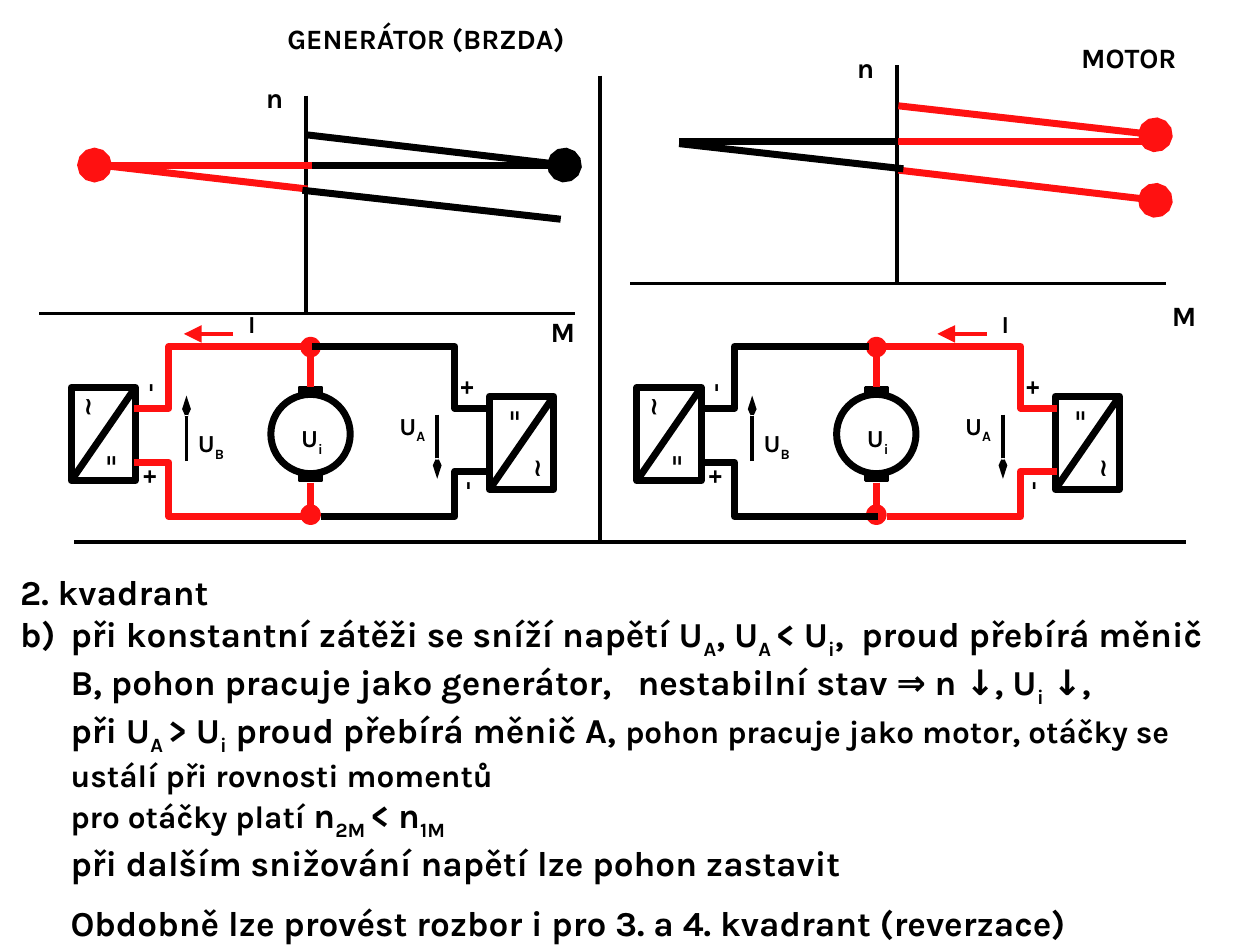
import pptx
import pptx.util
import pptx.dml.color
import pptx.enum.shapes
import pptx.enum.text
import pptx.oxml.ns
import lxml.etree

WIDE = pptx.util.Inches(10)
TALL = pptx.util.Inches(7.5)
COLS, ROWS = 100, 75
BLACK, RED = "000000", "FF1111"
KIND = pptx.enum.shapes.MSO_SHAPE


def col(num):
    return round(WIDE * num / COLS)


def row(num):
    return round(TALL * num / ROWS)


def hue(code):
    return pptx.dml.color.RGBColor.from_string(code)


def node(root, tag, **attrs):
    return lxml.etree.SubElement(root, pptx.oxml.ns.qn(tag), **attrs)


def stroke(item, code, width):
    item.line.color.rgb = hue(code)
    item.line.width = pptx.util.Pt(width)


def line(slide, start, stop, code=BLACK, width=4, tip=None, breadth="lg"):
    item = slide.shapes.add_connector(
        pptx.enum.shapes.MSO_CONNECTOR.STRAIGHT,
        col(start[0]), row(start[1]), col(stop[0]), row(stop[1]))
    stroke(item, code, width)
    if tip:
        node(item.line._get_or_add_ln(), "a:tailEnd", type=tip, w=breadth, len="lg")
    node(item._element.spPr, "a:effectLst")


def wire(slide, points, code):
    spots = [(col(x), row(y)) for x, y in points]
    form = slide.shapes.build_freeform(*spots[0], scale=1.0)
    form.add_line_segments(spots[1:], close=False)
    item = form.convert_to_shape()
    item.shadow.inherit = False
    item.fill.background()
    stroke(item, code, 4)


def block(slide, kind, mid, size, code=BLACK, width=4, solid=False):
    item = slide.shapes.add_shape(
        kind, col(mid[0] - size[0] / 2), row(mid[1] - size[1] / 2),
        col(size[0]), row(size[1]))
    item.shadow.inherit = False
    if solid:
        item.fill.solid()
        item.fill.fore_color.rgb = hue(code)
    else:
        item.fill.background()
    stroke(item, code, width)


def text(slide, words, spot, size, points=14, turn=0, wrap=False,
         inset=0.4, center=False, hang=0):
    item = slide.shapes.add_textbox(
        col(spot[0]), row(spot[1]), col(size[0]), row(size[1]))
    item.rotation = turn
    frame = item.text_frame
    frame.word_wrap = wrap
    frame.auto_size = pptx.enum.text.MSO_AUTO_SIZE.SHAPE_TO_FIT_TEXT
    if inset is not None:
        frame.margin_left = frame.margin_right = col(inset)
        frame.margin_top = frame.margin_bottom = row(inset)
    paras = [[(words, points)]] if isinstance(words, str) else words
    for num, parts in enumerate(paras):
        para = frame.add_paragraph() if num else frame.paragraphs[0]
        if center:
            para.alignment = pptx.enum.text.PP_ALIGN.CENTER
        if hang:
            props = para._p.get_or_add_pPr()
            props.set("marL", str(col(hang)))
            props.set("indent", str(-col(hang)))
        for words, points in parts:
            for place, piece in enumerate(words.split("|")):
                run = para.add_run()
                run.text = piece
                run.font.size = pptx.util.Pt(points)
                run.font.name = "Karla"
                run.font.bold = True
                run.font.color.rgb = hue(BLACK)
                if place % 2:
                    run.font._element.set("baseline", "-25000")
    return frame


def motor(slide, left):
    mid = left + 24.65
    block(slide, KIND.OVAL, (mid, 34.45), (6.3, 6.3))
    for cap, dot, start, stop in ((31.05, 27.55, 28.1, 30.7),
                                  (37.85, 40.85, 38.3, 40.1)):
        block(slide, KIND.RECTANGLE, (mid, cap), (1.7, 0.6), width=2, solid=True)
        block(slide, KIND.OVAL, (mid, dot), (1.1, 1.1), RED, solid=True)
        line(slide, (mid, start), (mid, stop), RED)
    text(slide, "U|i", (left + 23.5, 33.2), (2.7, 3.2))


def bridge(slide, x, y, turn, wave, bars):
    block(slide, KIND.RECTANGLE, (x, y), (5.1, 7.4))
    line(slide, (x + 2.55, y - 3.7), (x - 2.55, y + 3.7))
    for sign, (across, down) in (("∼", wave), ("=", bars)):
        text(slide, sign, (x + across, y + down), (2.3, 3.3), turn=turn,
             wrap=True, inset=None, center=True)


def circuit(slide, left, first, second, flow):
    motor(slide, left)
    bridge(slide, left + 41.4, 35.15, 90, (0.3, -0.25), (-1.4, -4.15))
    bridge(slide, left + 8.2, 34.45, 270, (-2.5, -3.15), (-0.8, 0.85))
    for sign, x, y, wide in (("+", 36.2, 29.5, 2.4), ("-", 36.6, 37.1, 1.6),
                             ("+", 11, 36.6, 2.4), ("-", 11.4, 29.3, 1.6)):
        text(slide, sign, (left + x, y), (wide, 3.1), turn=90)
    for name, x, y, arrow, start, stop in (("U|B", 15.3, 33.6, 14.8, 36.6, 31.4),
                                           ("U|A", 31.3, 32.2, 34.7, 32.9, 38)):
        line(slide, (left + arrow, start), (left + arrow, stop),
             width=2, tip="arrow", breadth="sm")
        text(slide, name, (left + x, y), (3.1, 3.2))
    for out, bend, end, port, rail, code in (
            (10.6, 13.4, 24.1, 32.4, 27.5, first),
            (39, 36.1, 25.5, 37.4, 41, second),
            (10.6, 13.4, 24.8, 36.7, 41, first),
            (39, 36.1, 24.8, 32.4, 27.5, second)):
        wire(slide, [(left + out, port), (left + bend, port),
                     (left + bend, rail), (left + end, rail)], code)
    line(slide, (flow + 18.5, 26.5), (flow + 14.6, 26.5), RED, 2, "triangle")
    text(slide, "I", (flow + 19.3, 24.1), (1.7, 3.1))


def axes(slide, left, top, mark, title, spot, size):
    line(slide, (left + 21.2, top), (left + 21.2, top + 17.3), width=2)
    line(slide, (left, top + 17.3), (left + 42.5, top + 17.3), width=2)
    text(slide, "n", (left + 17.6, top - 1.6), (2.2, 3.5), 16)
    text(slide, "M", mark, (2.8, 3.5), 16)
    text(slide, title, spot, size, 16)


def notes(slide):
    paras = [
        [("2. kvadrant", 20)],
        [("b)\tpři konstantní zátěži se sníží napětí U|A|, U|A |< U|i|,  proud "
          "přebírá měnič B, pohon pracuje jako generátor, \tnestabilní stav "
          "⇒ n ↓, U|i| ↓,", 20)],
        [("\tpři U|A |> U|i| proud přebírá měnič A, ", 20),
         ("pohon pracuje jako motor, otáčky se ustálí při rovnosti momentů", 18)],
        [("\tpro otáčky platí ", 18), ("n|2M |< n|1M", 20)],
        [("\tpři dalším snižování napětí lze pohon zastavit", 20)],
        [("\tObdobně lze provést rozbor i pro 3. a 4. kvadrant (reverzace)", 20)],
    ]
    frame = text(slide, paras, (1.2, 44.9), (97.6, 28.8), wrap=True, hang=4)
    frame.paragraphs[-1].space_before = pptx.util.Pt(10)


def curves(slide):
    for start, stop, code, tip in (
            ((24.3, 10.7), (44.8, 13.1), BLACK, "oval"),
            ((44.5, 13.1), (24, 13.1), BLACK, None),
            ((24.8, 13.1), (7.5, 13.1), RED, "oval"),
            ((7.9, 13.1), (24.4, 15), RED, None),
            ((24, 15.1), (44.5, 17.4), BLACK, None),
            ((71.3, 8.4), (91.7, 10.7), RED, "oval"),
            ((71.3, 13.5), (91.7, 15.9), RED, "oval"),
            ((91.7, 11.2), (71.3, 11.2), RED, None),
            ((71.3, 11.2), (53.9, 11.2), BLACK, None),
            ((53.9, 11.4), (71.7, 13.4), BLACK, None)):
        line(slide, start, stop, code, tip=tip)


def main():
    deck = pptx.Presentation()
    deck.slide_width, deck.slide_height = WIDE, TALL
    slide = deck.slides.add_slide(deck.slide_layouts[6])
    notes(slide)
    line(slide, (47.6, 6), (47.6, 43), width=2)
    line(slide, (5.9, 43), (94.1, 43), width=2)
    circuit(slide, 0, RED, BLACK, 0)
    circuit(slide, 44.9, BLACK, RED, 59.8)
    axes(slide, 3.1, 7.6, (43.3, 24.6), "GENERÁTOR (BRZDA)", (22.4, 1.3), (25.2, 3.5))
    axes(slide, 50, 5.2, (92.6, 23.3), "MOTOR", (85.4, 2.8), (9.2, 3.5))
    curves(slide)
    deck.save("out.pptx")


if __name__ == "__main__":
    main()
